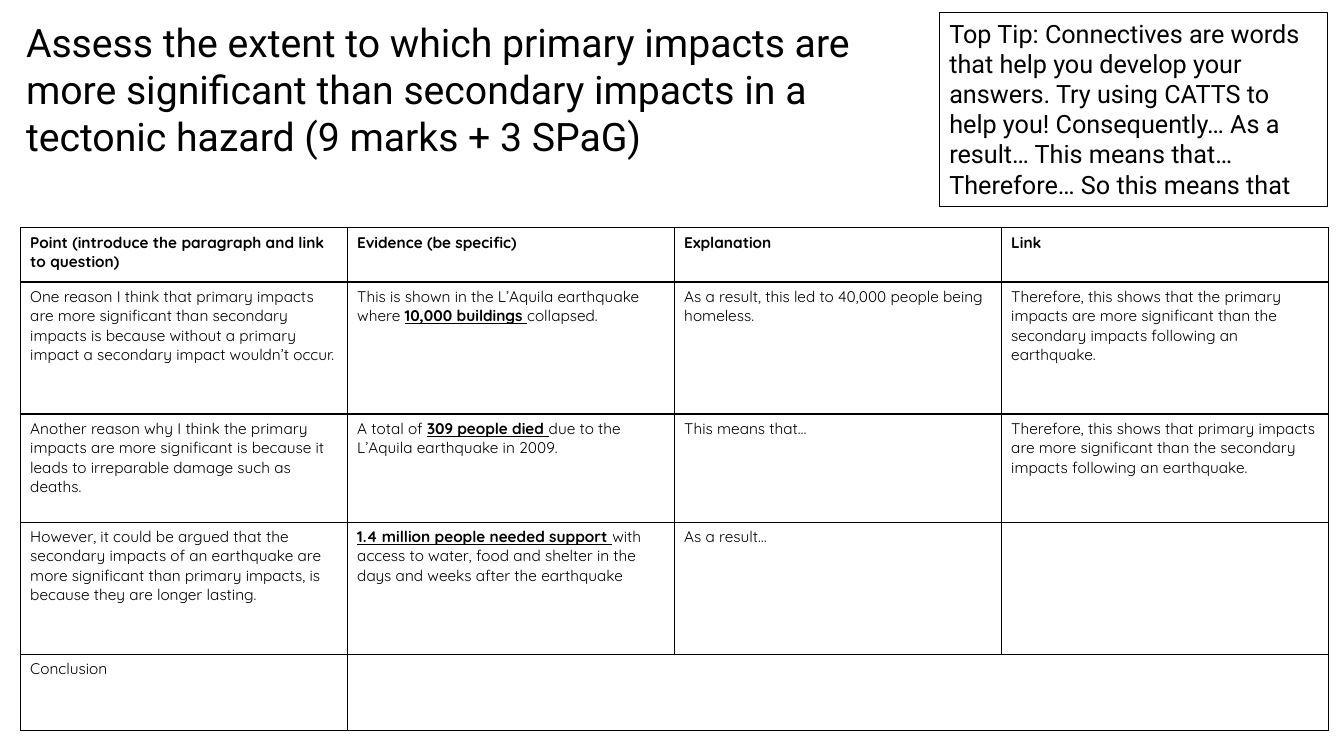
from lxml.etree import SubElement
from pptx import Presentation
from pptx.dml.color import RGBColor
from pptx.enum.shapes import MSO_SHAPE
from pptx.enum.text import MSO_ANCHOR, MSO_AUTO_SIZE, PP_ALIGN
from pptx.oxml import parse_xml
from pptx.oxml.ns import nsdecls, qn
from pptx.util import Pt

BLACK = RGBColor(0, 0, 0)
WHITE = RGBColor(255, 255, 255)
HEADING_FONT = "Roboto"
TABLE_FONT = "Quicksand"

QUESTION = (
    "Assess the extent to which primary impacts are more significant than "
    "secondary impacts in a tectonic hazard (9 marks + 3 SPaG)"
)
TOP_TIP = (
    "Top Tip: Connectives are words that help you develop your answers. "
    "Try using CATTS to help you! Consequently… As a result… This means that… "
    "Therefore… So this means that"
)
ROW_HEIGHTS = [38.9, 94.3, 77.2, 94.3, 54.5]
ANSWER_GRID = [
    [
        "Point (introduce the paragraph and link to question)",
        "Evidence (be specific)",
        "Explanation",
        "Link",
    ],
    [
        "One reason I think that primary impacts are more significant than secondary "
        "impacts is because without a primary impact a secondary impact wouldn’t occur.",
        "This is shown in the L’Aquila earthquake where *10,000 buildings *collapsed.",
        "As a result, this led to 40,000 people being homeless.",
        "Therefore, this shows that the primary impacts are more significant than "
        "the secondary impacts following an earthquake.",
    ],
    [
        "Another reason why I think the primary impacts are more significant is "
        "because it leads to irreparable damage such as deaths.",
        "A total of *309 people died *due to the L’Aquila earthquake in 2009.",
        "This means that…",
        "Therefore, this shows that primary impacts are more significant than "
        "the secondary impacts following an earthquake.",
    ],
    [
        "However, it could be argued that the secondary impacts of an earthquake are "
        "more significant than primary impacts, is because they are longer lasting.",
        "*1.4 million people needed support *with access to water, food and shelter "
        "in the days and weeks after the earthquake",
        "As a result…",
        "",
    ],
    ["Conclusion", "", "", ""],
]


def write_text(frame, text, *, size, font, bold=False):
    """Write left-aligned text, with parts between asterisks bold and underlined."""
    frame.word_wrap = True
    paragraph = frame.paragraphs[0]
    paragraph.alignment = PP_ALIGN.LEFT
    for index, part in enumerate(text.split("*")):
        if not part:
            continue
        key_fact = index % 2 == 1
        run = paragraph.add_run()
        run.text = part
        run.font.size = Pt(size)
        run.font.name = font
        run.font.bold = bold or key_fact
        run.font.underline = key_fact
        run.font.color.rgb = BLACK


def add_question(slide, left, top, width, height):
    """Place the exam question in the title placeholder."""
    question = slide.shapes.title
    question.left, question.top = Pt(left), Pt(top)
    question.width, question.height = Pt(width), Pt(height)
    question.text_frame.auto_size = MSO_AUTO_SIZE.NONE
    question.text_frame.vertical_anchor = MSO_ANCHOR.TOP
    write_text(question.text_frame, QUESTION, size=28, font=HEADING_FONT)


def add_top_tip(slide, left, top, width, height):
    """Draw the outlined box with the advice on connectives."""
    tip = slide.shapes.add_shape(
        MSO_SHAPE.RECTANGLE, Pt(left), Pt(top), Pt(width), Pt(height)
    )
    tip.shadow.inherit = False
    tip.fill.background()
    tip.line.color.rgb = BLACK
    tip.line.width = Pt(0.75)
    tip.text_frame.vertical_anchor = MSO_ANCHOR.TOP
    write_text(tip.text_frame, TOP_TIP, size=18, font=HEADING_FONT)


def outline_cell(cell):
    """Give a cell a thin black border on every side."""
    properties = cell._tc.get_or_add_tcPr()
    for position, side in enumerate(("lnL", "lnR", "lnT", "lnB")):
        border = parse_xml(f'<a:{side} {nsdecls("a")} w="{Pt(1)}"/>')
        ink = SubElement(border, qn("a:solidFill"))
        SubElement(ink, qn("a:srgbClr"), val=str(BLACK))
        properties.insert(position, border)


def add_answer_grid(slide, left, top, width, height):
    """Build the paragraph planning table with its merged conclusion row."""
    grid = slide.shapes.add_table(
        len(ANSWER_GRID), len(ANSWER_GRID[0]), Pt(left), Pt(top), Pt(width), Pt(height)
    ).table
    grid.first_row = grid.horz_banding = False
    for row, row_height in zip(grid.rows, ROW_HEIGHTS):
        row.height = Pt(row_height)
    for row_index, answers in enumerate(ANSWER_GRID):
        for column_index, answer in enumerate(answers):
            cell = grid.cell(row_index, column_index)
            cell.fill.background()
            outline_cell(cell)
            write_text(
                cell.text_frame, answer, size=11, font=TABLE_FONT, bold=row_index == 0
            )
    last_row = len(ANSWER_GRID) - 1
    grid.cell(last_row, 1).merge(grid.cell(last_row, 3))


def main():
    """Build the slide and save it."""
    presentation = Presentation()
    presentation.slide_width, presentation.slide_height = Pt(960), Pt(540)
    slide = presentation.slides.add_slide(presentation.slide_layouts[5])
    slide.background.fill.solid()
    slide.background.fill.fore_color.rgb = WHITE
    add_answer_grid(slide, 14.4, 162.6, 934.4, sum(ROW_HEIGHTS))
    add_question(slide, 11.4, 9.2, 648, 108.7)
    add_top_tip(slide, 671, 9.2, 277.6, 138.4)
    presentation.save("out.pptx")


if __name__ == "__main__":
    main()
